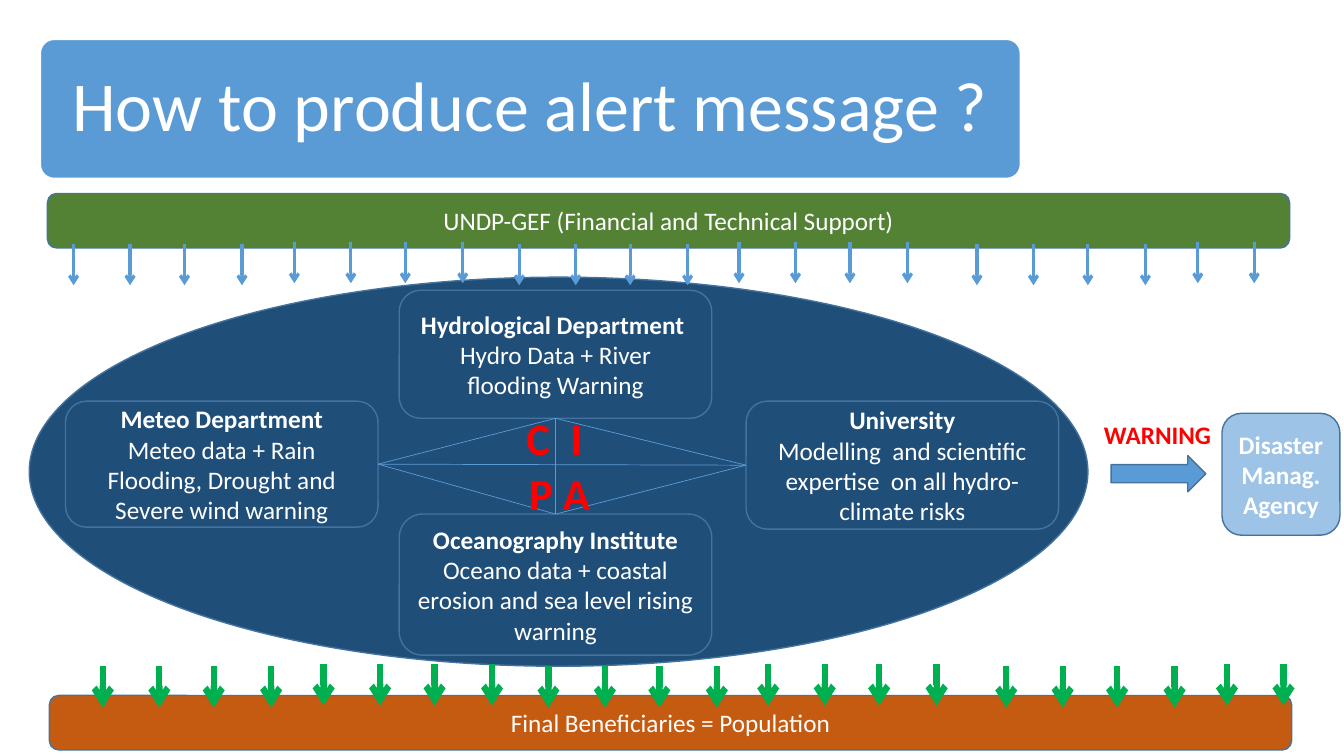
"""Build the slide on how the partner institutions produce an alert message."""
from lxml import etree
from pptx import Presentation
from pptx.dml.color import RGBColor
from pptx.enum.shapes import MSO_CONNECTOR, MSO_SHAPE
from pptx.enum.text import MSO_ANCHOR, PP_ALIGN
from pptx.oxml.ns import qn
from pptx.util import Pt

ROUNDED, ELLIPSE, RIGHT_ARROW = MSO_SHAPE.ROUNDED_RECTANGLE, MSO_SHAPE.OVAL, MSO_SHAPE.RIGHT_ARROW
STRAIGHT, MIDDLE, CENTER = MSO_CONNECTOR.STRAIGHT, MSO_ANCHOR.MIDDLE, PP_ALIGN.CENTER
TOP, LEFT, BOTTOM, RIGHT = range(4)
PX = 9144
FONT = "Calibri"
COLORS = {
    "white": "FFFFFF", "navy": "1F4E79", "blue": "5B9BD5", "pale": "9DC3E6", "edge": "43739E",
    "olive": "548235", "orange": "C55A11", "green": "00B050", "red": "FF0000",
}

TITLE = "How to produce alert message ?"
BANDS = [
    ("UNDP-GEF (Financial and Technical Support)", (47, 192, 1232, 54), "olive"),
    ("Final Beneficiaries = Population", (49, 690, 1232, 54), "orange"),
]
PARTNERS = {
    "ocean": ((396, 510, 310, 140), "Oceanography Institute",
              "Oceano data + coastal erosion and sea level rising warning"),
    "meteo": ((65, 398, 310, 125), "Meteo Department",
              "Meteo data + Rain Flooding, Drought and Severe wind warning"),
    "hydro": ((396, 288, 310, 127), "Hydrological Department ",
              "Hydro Data + River flooding Warning"),
    "university": ((740, 398, 310, 127), "University",
                   "Modelling  and scientific expertise  on all hydro-climate risks"),
}
LINKS = [
    ("hydro", BOTTOM, "meteo", RIGHT), ("meteo", RIGHT, "ocean", TOP),
    ("hydro", BOTTOM, "ocean", TOP), ("hydro", BOTTOM, "university", LEFT),
    ("university", LEFT, "ocean", TOP), ("meteo", RIGHT, "university", LEFT),
]
AGENCY = "Disaster Manag.\vAgency"
WARNING = "WARNING"
CIPA = ["C  I ", "P A"]

GROUP_STARTS = [73, 292, 515, 733, 969, 1188]
GROUP_OFFSETS = [0, 56, 110, 167]
LAST_GROUP_SIZE = 2
ARROW_LENGTH = 41
ARROW_ROWS = [(0, 242, "blue", 2.25), (29, 661, "green", 4.5)]


def rgb(name):
    return RGBColor.from_string(COLORS[name])


def write(shape, lines, size=18, color="white", bold_lines=0):
    frame = shape.text_frame
    frame.word_wrap = True
    frame.vertical_anchor = MIDDLE
    for index, line in enumerate(lines):
        paragraph = frame.paragraphs[0] if index == 0 else frame.add_paragraph()
        paragraph.text = line
        paragraph.alignment = CENTER
        font = paragraph.font
        font.name, font.size, font.bold = FONT, Pt(size), index < bold_lines
        font.color.rgb = rgb(color)
    return frame


def add_block(shapes, kind, box, fill, edge="edge"):
    block = shapes.add_shape(kind, *(v * PX for v in box))
    block.shadow.inherit = False
    block.fill.solid()
    block.fill.fore_color.rgb = rgb(fill)
    block.line.color.rgb = rgb(edge)
    block.line.width = Pt(1)
    return block


def add_line(shapes, ends, color, width):
    line = shapes.add_connector(STRAIGHT, *(v * PX for v in ends))
    line.line.color.rgb = rgb(color)
    line.line.width = Pt(width)
    etree.SubElement(line._element.spPr, qn("a:effectLst"))
    return line


def add_label(shapes, box, lines, size):
    label = shapes.add_textbox(*(v * PX for v in box))
    return write(label, lines, size, "red", len(lines))


def main():
    deck = Presentation()
    deck.slide_width, deck.slide_height = 1333 * PX, 750 * PX
    shapes = deck.slides.add_slide(deck.slide_layouts[6]).shapes

    add_block(shapes, ELLIPSE, (29, 275, 1050, 386), "navy")
    heading = add_block(shapes, ROUNDED, (40, 39, 972, 138), "blue", "white")
    heading.adjustments[0] = 0.1
    frame = write(heading, [TITLE], 50)
    frame.margin_left = frame.margin_right = 21 * PX
    frame.paragraphs[0].line_spacing = 0.9

    agency = add_block(shapes, ROUNDED, (1212, 410, 117, 121), "pale")
    write(agency, [AGENCY], bold_lines=1)
    partners = {}
    for key, (box, name, task) in PARTNERS.items():
        partners[key] = add_block(shapes, ROUNDED, box, "navy")
        write(partners[key], [name, task], bold_lines=1)
    for caption, box, fill in BANDS:
        write(add_block(shapes, ROUNDED, box, fill), [caption])

    for shift, top, color, width in ARROW_ROWS:
        for group, start in enumerate(GROUP_STARTS):
            last = group == len(GROUP_STARTS) - 1
            y = top - 2 * (group % 2)
            for offset in GROUP_OFFSETS[:LAST_GROUP_SIZE if last else None]:
                x = start + offset + shift
                arrow = add_line(shapes, (x, y, x, y + ARROW_LENGTH), color, width)
                etree.SubElement(arrow.line._get_or_add_ln(), qn("a:tailEnd"), type="arrow")

    for source, source_side, target, target_side in LINKS:
        link = add_line(shapes, (0, 0, 0, 0), "blue", 0.5)
        link.begin_connect(partners[source], source_side)
        link.end_connect(partners[target], target_side)

    add_block(shapes, RIGHT_ARROW, (1102, 452, 94, 36), "blue")
    add_label(shapes, (1079, 410, 138, 42), [WARNING], 18)
    cipa = add_label(shapes, (377, 425, 356, 73), CIPA, 32)
    cipa.paragraphs[1].space_before = Pt(1)

    deck.save("out.pptx")


if __name__ == "__main__":
    main()
